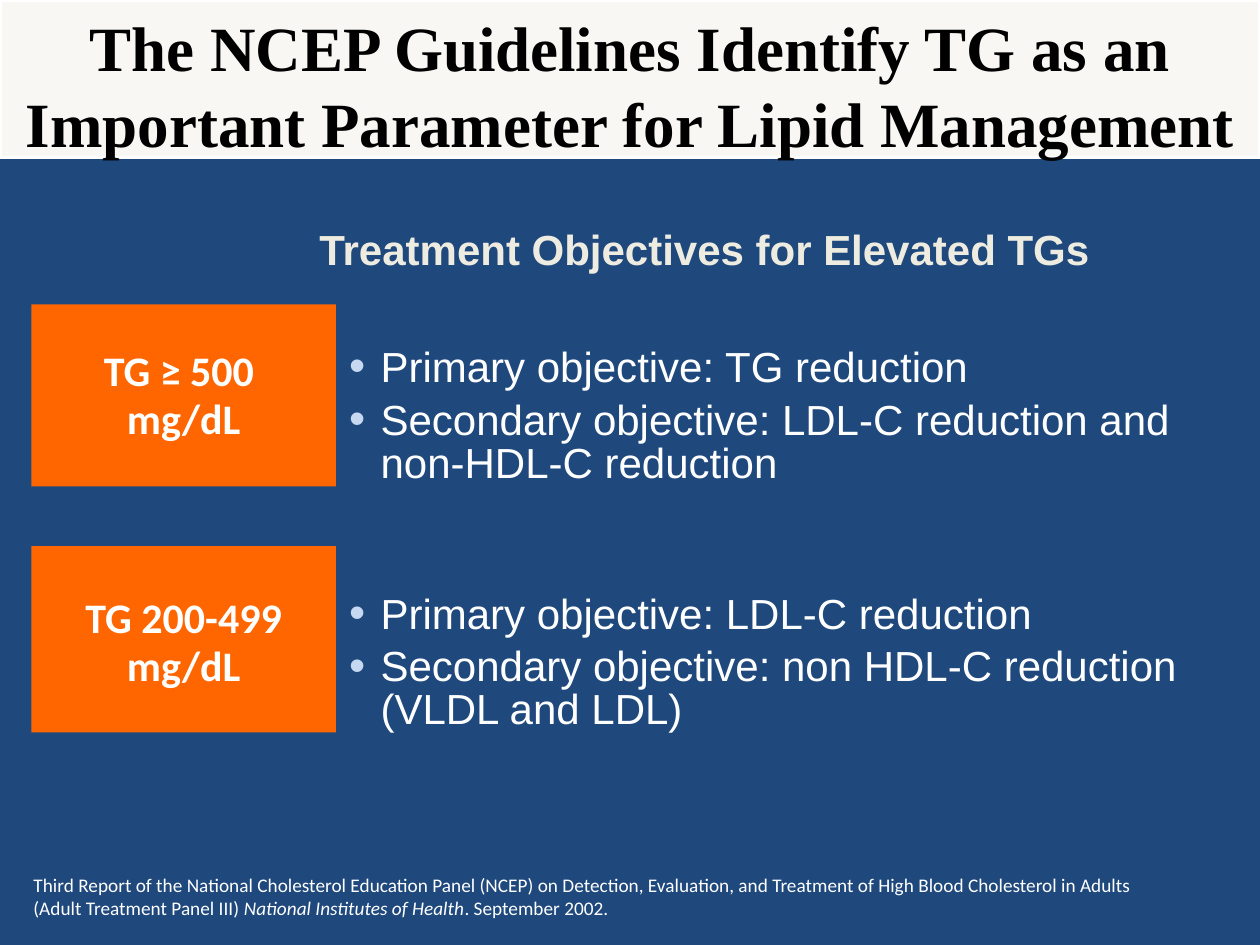
from dataclasses import dataclass

from lxml.etree import SubElement
from pptx import Presentation
from pptx.dml.color import RGBColor
from pptx.enum.shapes import MSO_SHAPE
from pptx.enum.text import MSO_ANCHOR, PP_ALIGN
from pptx.oxml.ns import qn
from pptx.util import Pt


@dataclass(frozen=True)
class Theme:
    navy: str = "1F497D"
    band: str = "F8F7F3"
    white: str = "FFFFFF"
    black: str = "000000"
    cream: str = "EEECE1"
    orange: str = "FF6600"
    bullet: str = "C6D9F1"
    title_font: str = "Times New Roman"
    body_font: str = "Arial"
    label_font: str = "Calibri"
    title_size: int = 36
    body_size: int = 24
    source_size: int = 11


T = Theme()


def color(value):
    return RGBColor.from_string(value)


def add_rect(s, box, fill, line=None):
    sp = s.shapes.add_shape(MSO_SHAPE.RECTANGLE, *map(Pt, box))
    sp.shadow.inherit = False
    sp.fill.solid()
    sp.fill.fore_color.rgb = color(fill)
    if line:
        sp.line.color.rgb = color(line)
        sp.line.width = Pt(2)
    else:
        sp.line.fill.background()
    return sp


def setup_frame(sp, margins=(7.2, 3.6, 7.2, 3.6), anchor=MSO_ANCHOR.TOP):
    tf = sp.text_frame
    tf.word_wrap = True
    tf.vertical_anchor = anchor
    tf.margin_left, tf.margin_top, tf.margin_right, tf.margin_bottom = map(Pt, margins)
    return tf


def add_text(s, box, **frame):
    return setup_frame(s.shapes.add_textbox(*map(Pt, box)), **frame)


def add_run(p, text, font, size, rgb, bold=False, italic=False):
    r = p.add_run()
    r.text = text
    r.font.name, r.font.size = font, Pt(size)
    r.font.bold, r.font.italic = bold, italic
    r.font.color.rgb = color(rgb)


def next_paragraph(tf, index, align=PP_ALIGN.LEFT, spacing=1.0):
    p = tf.add_paragraph() if index else tf.paragraphs[0]
    p.alignment = align
    p.line_spacing = spacing
    return p


def set_bullet(p, indent):
    pPr = p._p.get_or_add_pPr()
    pPr.set("marL", str(Pt(indent)))
    pPr.set("indent", str(-Pt(indent)))
    SubElement(SubElement(pPr, qn("a:buClr")), qn("a:srgbClr"), val=T.bullet)
    SubElement(pPr, qn("a:buSzPct"), val="110000")
    SubElement(pPr, qn("a:buFont"), typeface=T.body_font)
    SubElement(pPr, qn("a:buChar"), char="•")


def title_band(s, box, text):
    add_rect(s, box, T.band, T.white)
    x, y, w, h = box
    tf = add_text(s, (x + 6, y + 6, w - 12, h - 6), anchor=MSO_ANCHOR.MIDDLE)
    p = next_paragraph(tf, 0, PP_ALIGN.CENTER)
    add_run(p, text, T.title_font, T.title_size, T.black, bold=True)


def heading(s, box, text):
    tf = add_text(s, box, margins=(0, 0, 0, 0))
    p = next_paragraph(tf, 0, spacing=0.85)
    add_run(p, text, T.body_font, T.body_size, T.cream, bold=True)


def objective_row(s, box, text_drop, label, objectives):
    x, y, w, h = box
    label_w, gap = 174, 7.5

    # Level label
    tf = setup_frame(add_rect(s, (x, y, label_w, h), T.orange),
                     margins=(7.2, text_drop, 7.2, 3.6))
    for i, text in enumerate(label):
        p = next_paragraph(tf, i, PP_ALIGN.CENTER, 0.95)
        add_run(p, text, T.label_font, T.body_size, T.white, bold=True)

    # Objectives
    left = label_w + gap
    tf = add_text(s, (x + left, y + text_drop, w - left, h - text_drop),
                  margins=(0, 0, 0, 0))
    for i, text in enumerate(objectives):
        p = next_paragraph(tf, i, spacing=0.85)
        p.space_after = Pt(5.6)
        set_bullet(p, 18)
        for j, line in enumerate(text.split("\n")):
            if j:
                p.add_line_break()
            add_run(p, line, T.body_font, T.body_size, T.white)


def source_note(s, box, lines):
    tf = add_text(s, box)
    for i, runs in enumerate(lines):
        p = next_paragraph(tf, i)
        for text, italic in runs:
            add_run(p, text, T.label_font, T.source_size, T.white, italic=italic)


def main():
    prs = Presentation()
    prs.slide_width, prs.slide_height = Pt(720), Pt(540)
    s = prs.slides.add_slide(prs.slide_layouts[6])
    s.background.fill.solid()
    s.background.fill.fore_color.rgb = color(T.navy)

    # Title and heading
    title_band(s, (0, 0, 720, 90),
               "The NCEP Guidelines Identify TG as an Important Parameter for Lipid Management")
    heading(s, (182.5, 132, 507, 24), "Treatment Objectives for Elevated TGs")

    # Triglyceride levels
    objective_row(s, (18, 174, 671, 104), 25, ["TG ≥ 500 ", "mg/dL"], [
        "Primary objective: TG reduction",
        "Secondary objective: LDL-C reduction and \nnon-HDL-C reduction"])
    objective_row(s, (18, 312, 671, 106.5), 28, ["TG 200-499 mg/dL"], [
        "Primary objective: LDL-C reduction",
        "Secondary objective: non HDL-C reduction (VLDL and LDL)"])

    # Source
    source_note(s, (12, 495.5, 696, 34), [
        [("Third Report of the National Cholesterol Education Panel (NCEP) on Detection, "
          "Evaluation, and Treatment of High Blood Cholesterol in Adults", False)],
        [("(Adult Treatment Panel III) ", False),
         ("National Institutes of Health", True),
         (". September 2002.", False)]])
    prs.save("out.pptx")


if __name__ == "__main__":
    main()
